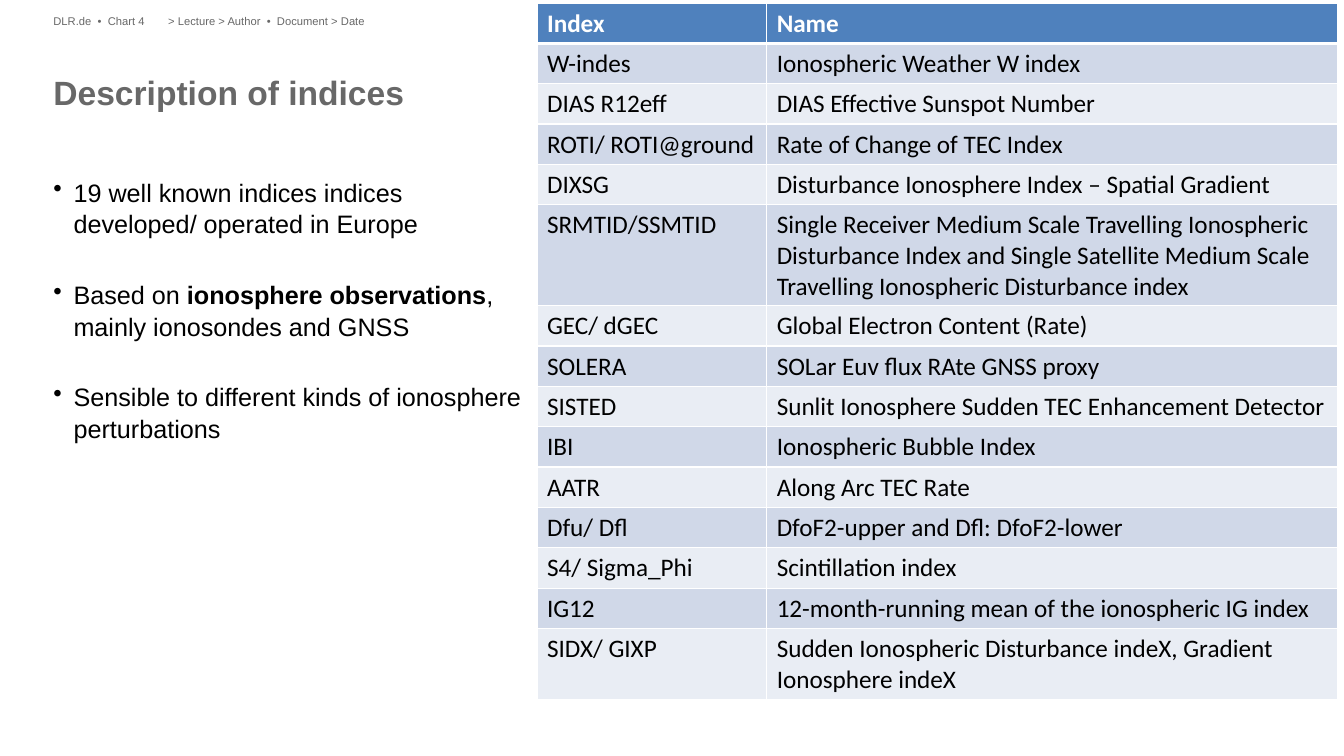
from lxml import etree
from pptx import Presentation
from pptx import util as u
from pptx.dml.color import RGBColor
from pptx.enum import text
from pptx.oxml.ns import qn

COLORS = {
    "grey": "686868",
    "black": "000000",
    "white": "FFFFFF",
    "header": "4F81BD",
    "odd row": "D0D8E8",
    "even row": "E9EDF4",
}
INDICES = [
    ("Index", "Name"),
    ("W-indes", "Ionospheric Weather W index"),
    ("DIAS R12eff", "DIAS Effective Sunspot Number"),
    ("ROTI/ ROTI@ground", "Rate of Change of TEC Index"),
    ("DIXSG", "Disturbance Ionosphere Index – Spatial Gradient"),
    ("SRMTID/SSMTID", "Single Receiver Medium Scale Travelling Ionospheric "
     "Disturbance Index and Single Satellite Medium Scale "
     "Travelling Ionospheric Disturbance index"),
    ("GEC/ dGEC", "Global Electron Content (Rate)"),
    ("SOLERA", "SOLar Euv flux RAte GNSS proxy"),
    ("SISTED", "Sunlit Ionosphere Sudden TEC Enhancement Detector"),
    ("IBI", "Ionospheric Bubble Index"),
    ("AATR", "Along Arc TEC Rate"),
    ("Dfu/ Dfl", "DfoF2-upper and Dfl: DfoF2-lower"),
    ("S4/ Sigma_Phi", "Scintillation index"),
    ("IG12", "12-month-running mean of the ionospheric IG index"),
    ("SIDX/ GIXP", "Sudden Ionospheric Disturbance indeX, Gradient Ionosphere indeX"),
]
# Each bullet is a list of (words, bold) runs.
BULLETS = [
    [("19 well known indices indices developed/ operated in Europe", False)],
    [("Based on ", False), ("ionosphere observations", True),
     (", mainly ionosondes and GNSS", False)],
    [("Sensible to different kinds of ionosphere perturbations", False)],
]


class SlideBuilder:
    """Holds the fonts and the current slide, and adds elements to it."""

    body_font = "Arial"
    table_font = "Calibri"

    def __init__(self, slide):
        self.slide = slide

    def add_run(self, paragraph, words, font_name, size, color, bold=False):
        run = paragraph.add_run()
        run.text = words
        for name, value in {"name": font_name, "size": u.Pt(size), "bold": bold}.items():
            setattr(run.font, name, value)
        run.font.color.rgb = RGBColor.from_string(COLORS[color])

    def add_frame(self, left, top, width, height):
        """Add a text box without margins and return its text frame."""
        box = self.slide.shapes.add_textbox(*map(u.Inches, (left, top, width, height)))
        frame_format = {
            "margin_left": 0, "margin_top": 0, "margin_right": 0, "margin_bottom": 0,
            "word_wrap": True, "vertical_anchor": text.MSO_ANCHOR.TOP,
        }
        for name, value in frame_format.items():
            setattr(box.text_frame, name, value)
        return box.text_frame

    def add_label(self, words, place, size, bold=False):
        frame = self.add_frame(*place)
        self.add_run(frame.paragraphs[0], words, self.body_font, size, "grey", bold)

    def add_bullets(self, bullets, place, size):
        frame = self.add_frame(*place)
        for number, runs in enumerate(bullets):
            paragraph = frame.add_paragraph() if number else frame.paragraphs[0]
            properties = paragraph._p.get_or_add_pPr()
            properties.set("marL", str(u.Inches(0.2)))
            properties.set("indent", str(u.Inches(-0.2)))
            etree.SubElement(properties, qn("a:buChar"), char="•")
            paragraph.line_spacing = 1.05
            if number:
                paragraph.space_before = u.Pt(27.7)
            for words, bold in runs:
                self.add_run(paragraph, words, self.body_font, size, "black", bold)

    def set_borders(self, cell, bottom, top):
        """Draw white borders, placed ahead of the cell's fill."""
        properties = cell._tc.get_or_add_tcPr()
        widths = {"lnL": 1, "lnR": 1, "lnT": top, "lnB": bottom}
        for position, (side, width) in enumerate(widths.items()):
            line = etree.Element(qn(f"a:{side}"), w=str(u.Pt(width)))
            fill = etree.SubElement(line, qn("a:solidFill"))
            etree.SubElement(fill, qn("a:srgbClr"), val=COLORS["white"])
            properties.insert(position, line)

    def add_table(self, rows, left, top, column_widths, row_height, size):
        frame = self.slide.shapes.add_table(
            len(rows), len(column_widths), u.Inches(left), u.Inches(top),
            u.Inches(sum(column_widths)), u.Inches(row_height * len(rows)))
        table = frame.table
        for column, width in zip(table.columns, column_widths):
            column.width = u.Inches(width)
        for row_number, row in enumerate(rows):
            is_header = row_number == 0
            band = "header" if is_header else "odd row" if row_number % 2 else "even row"
            for column_number, words in enumerate(row):
                cell = table.cell(row_number, column_number)
                cell.fill.solid()
                cell.fill.fore_color.rgb = RGBColor.from_string(COLORS[band])
                self.set_borders(cell, bottom=3 if is_header else 1,
                                 top=3 if row_number == 1 else 1)
                self.add_run(cell.text_frame.paragraphs[0], words, self.table_font, size,
                             "white" if is_header else "black", is_header)


def main():
    presentation = Presentation()
    presentation.slide_width = u.Inches(13.34)
    presentation.slide_height = u.Inches(7.5)
    builder = SlideBuilder(presentation.slides.add_slide(presentation.slide_layouts[6]))

    builder.add_label("Description of indices", (0.53, 0.71, 12.27, 0.81), 24, bold=True)
    builder.add_bullets(BULLETS, (0.53, 1.74, 4.65, 4.74), 18)
    builder.add_label("> Lecture > Author  •  Document > Date", (1.67, 0.14, 11.13, 0.16), 8)
    builder.add_label("DLR.de  •  Chart 4", (0.53, 0.14, 1.14, 0.16), 8)
    builder.add_table(INDICES, 5.33, 0.03, (2.28, 5.67), 0.4, 18)

    presentation.save("out.pptx")


if __name__ == "__main__":
    main()
